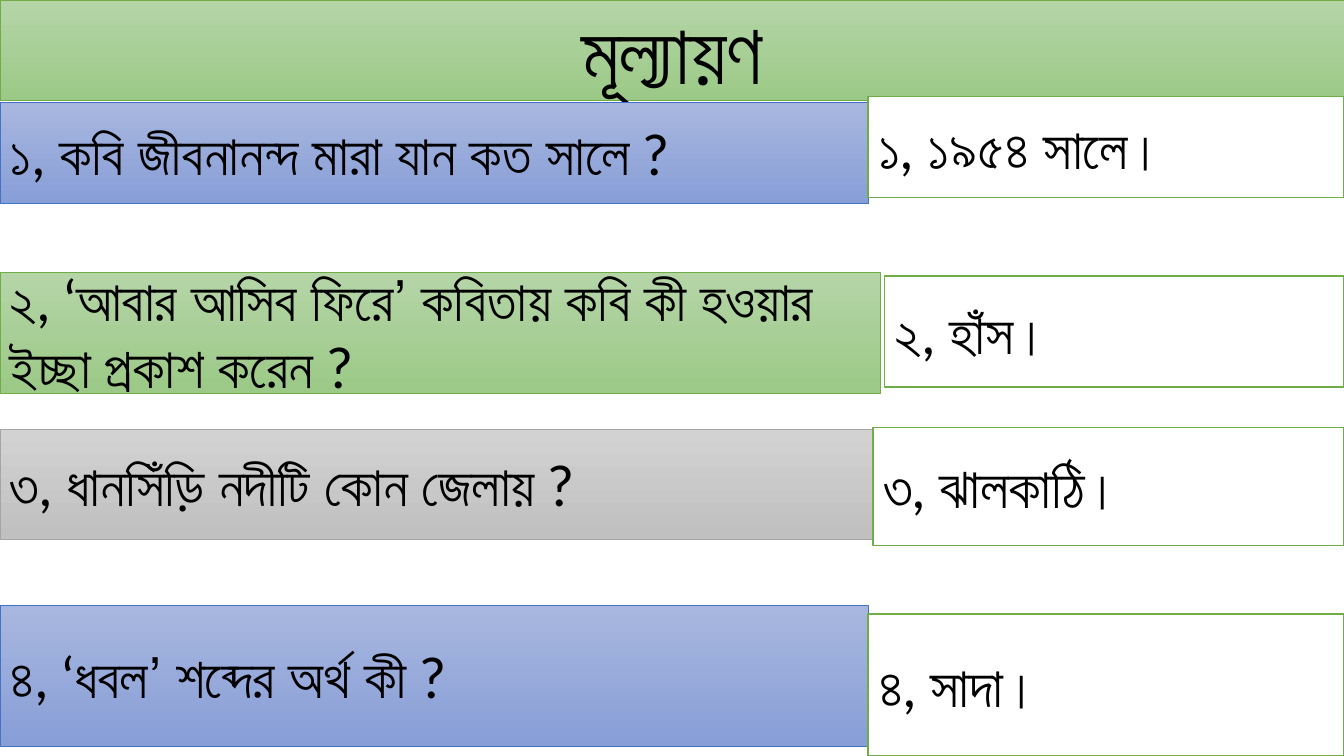
from pptx import Presentation
from pptx.dml.color import RGBColor
from pptx.enum import shapes, text
from pptx.util import Inches, Pt

BLACK = RGBColor(0x00, 0x00, 0x00)
WHITE = RGBColor(0xFF, 0xFF, 0xFF)
GREEN_LINE = RGBColor(0x70, 0xAD, 0x47)
# Each theme: gradient top, gradient bottom, outline
GREEN = (RGBColor(0xB5, 0xD5, 0xA7), RGBColor(0x9C, 0xC9, 0x87), GREEN_LINE)
BLUE = (RGBColor(0xA8, 0xB7, 0xDF), RGBColor(0x88, 0x9E, 0xD7), RGBColor(0x44, 0x72, 0xC4))
GRAY = (RGBColor(0xD2, 0xD2, 0xD2), RGBColor(0xC0, 0xC0, 0xC0), RGBColor(0xA5, 0xA5, 0xA5))


def write(sp, words, size=40, align=text.PP_ALIGN.LEFT):
    tf = sp.text_frame
    tf.word_wrap = True
    tf.auto_size = text.MSO_AUTO_SIZE.NONE
    tf.vertical_anchor = text.MSO_ANCHOR.MIDDLE
    p = tf.paragraphs[0]
    p.alignment = align
    p.line_spacing = 1.0
    r = p.add_run()
    r.text = words
    r.font.name = "Lato"
    r.font.size = Pt(size)
    r.font.color.rgb = BLACK


def paint(sp, theme):
    """Fill with a top-to-bottom gradient and a thin outline."""
    top, bottom, line = theme
    sp.fill.gradient()
    sp.fill.gradient_angle = 270
    for stop, color in zip(sp.fill.gradient_stops, (top, bottom)):
        stop.color.rgb = color
    sp.line.color.rgb = line
    sp.line.width = Pt(0.5)


prs = Presentation()
prs.slide_width = Inches(13.33)
prs.slide_height = Inches(7.5)
s = prs.slides.add_slide(prs.slide_layouts[5])

title = s.shapes.title
title.left, title.top = Inches(0), Inches(0)
title.width, title.height = prs.slide_width, Inches(1)
paint(title, GREEN)
write(title, "মূল্যায়ণ", size=60, align=text.PP_ALIGN.CENTER)

# Question, theme, (top, width, height), answer, (left, top, height)
rows = [
    ("১, কবি জীবনানন্দ মারা যান কত সালে ?", BLUE, (1.02, 8.61, 1),
     "১, ১৯৫৪ সালে।", (8.61, 0.96, 1)),
    ("২, ‘আবার আসিব ফিরে’ কবিতায় কবি কী হওয়ার ইচ্ছা প্রকাশ করেন ?", GREEN, (2.7, 8.73, 1.2),
     "২, হাঁস।", (8.77, 2.74, 1.1)),
    ("৩, ধানসিঁড়ি নদীটি কোন জেলায় ?", GRAY, (4.26, 8.67, 1.09),
     "৩, ঝালকাঠি।", (8.66, 4.24, 1.17)),
    ("৪, ‘ধবল’ শব্দের অর্থ কী ?", BLUE, (6.01, 8.61, 1.39),
     "৪, সাদা।", (8.61, 6.09, 1.41)),
]
for question, theme, (q_top, q_width, q_height), answer, (a_left, a_top, a_height) in rows:
    sp = s.shapes.add_shape(shapes.MSO_SHAPE.RECTANGLE, Inches(0), Inches(q_top),
                            Inches(q_width), Inches(q_height))
    sp.shadow.inherit = False
    paint(sp, theme)
    write(sp, question)

    sp = s.shapes.add_shape(shapes.MSO_SHAPE.RECTANGLE, Inches(a_left), Inches(a_top),
                            prs.slide_width - Inches(a_left), Inches(a_height))
    sp.shadow.inherit = False
    sp.fill.solid()
    sp.fill.fore_color.rgb = WHITE
    sp.line.color.rgb = GREEN_LINE
    sp.line.width = Pt(1)
    write(sp, answer)

prs.save("out.pptx")
